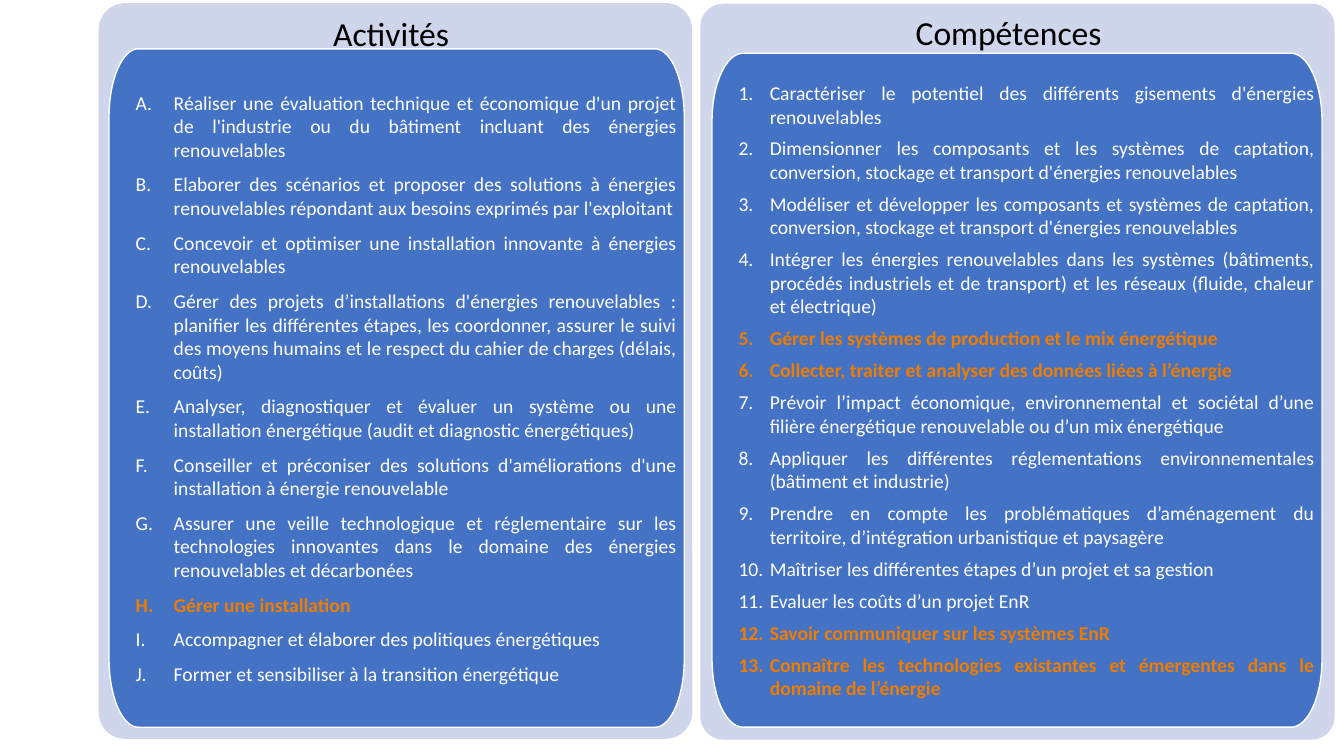
from dataclasses import dataclass

from lxml import etree
from pptx import Presentation
from pptx import util as u
from pptx.dml.color import RGBColor
from pptx.enum import shapes, text
from pptx.oxml.ns import qn


@dataclass(frozen=True)
class Theme:
    font: str = "Calibri"
    heading_size: int = 24
    item_size: int = 14
    card: str = "CFD5EA"
    panel: str = "4472C4"
    heading: str = "000000"
    item: str = "FFFFFF"
    new_item: str = "EF7D00"
    outline: str = "FFFFFF"


class Page:
    """Draws on one slide in one style; all lengths are in points."""

    def __init__(self, slide, theme):
        self.slide, self.theme = slide, theme

    def style(self, paragraph, size, colour, bold=False):
        for run in paragraph.runs:
            run.font.name = self.theme.font
            run.font.size = u.Pt(size)
            run.font.bold = bold
            run.font.color.rgb = RGBColor.from_string(colour)

    def fill(self, shape, colour):
        shape.shadow.inherit = False
        shape.fill.solid()
        shape.fill.fore_color.rgb = RGBColor.from_string(colour)

    def card(self, box, rounding):
        card = self.slide.shapes.add_shape(
            shapes.MSO_SHAPE.ROUNDED_RECTANGLE, *map(u.Pt, box))
        card.adjustments[0] = rounding
        self.fill(card, self.theme.card)
        card.line.fill.background()

    def heading(self, box, wording):
        frame = self.slide.shapes.add_textbox(*map(u.Pt, box)).text_frame
        frame.word_wrap = True
        frame.vertical_anchor = text.MSO_ANCHOR.MIDDLE
        frame.margin_left = frame.margin_right = u.Pt(27)
        frame.margin_top = frame.margin_bottom = 0
        frame.text = wording
        title = frame.paragraphs[0]
        title.alignment = text.PP_ALIGN.CENTER
        title.line_spacing = 0.9
        self.style(title, self.theme.heading_size, self.theme.heading)

    def panel(self, box):
        """Rectangle with tall elliptical corners, 5.1 % by 10.1 % of its size."""
        left, top, width, height = map(u.Pt, box)
        rx, ry = int(0.051 * width), int(0.101 * height)
        points = [(0, ry), (rx, 0), (width - rx, 0), (width, ry),
                  (width, height - ry), (width - rx, height), (rx, height), (0, height - ry)]
        corners = [(0, 0), (width, 0), (width, height), (0, height)]
        outline = self.slide.shapes.build_freeform(*points[0])
        outline.add_line_segments(points[1:] + points[:1], close=True)
        panel = outline.convert_to_shape(left, top)
        # Turn every other straight side into a quarter ellipse
        sides = list(panel._element.iter(qn("a:lnTo")))[::2]
        for side, corner, start, end in zip(sides, corners, points[::2], points[1::2]):
            curve = etree.Element(qn("a:cubicBezTo"))
            pulls = [tuple(round(p + 0.55 * (c - p)) for p, c in zip(point, corner))
                     for point in (start, end)]
            for x, y in (*pulls, end):
                etree.SubElement(curve, qn("a:pt"), x=str(x), y=str(y))
            side.getparent().replace(side, curve)
        self.fill(panel, self.theme.panel)
        panel.line.color.rgb = RGBColor.from_string(self.theme.outline)
        panel.line.width = u.Pt(1)
        return panel

    def numbered_list(self, panel, items, new, scheme, indent, hanging, gap):
        frame = panel.text_frame
        frame.word_wrap = True
        frame.vertical_anchor = text.MSO_ANCHOR.MIDDLE
        frame.margin_left = frame.margin_right = u.Pt(5.25)
        frame.margin_top = frame.margin_bottom = u.Pt(5.25)
        frame.text = "\n".join(items)
        for number, item in enumerate(frame.paragraphs, 1):
            item.alignment = text.PP_ALIGN.JUSTIFY
            item.space_after = u.Pt(gap)
            props = item._p.get_or_add_pPr()
            props.set("marL", str(u.Pt(indent)))
            props.set("indent", str(u.Pt(-hanging)))
            etree.SubElement(props, qn("a:buFont"), typeface="+mj-lt")
            etree.SubElement(props, qn("a:buAutoNum"), type=scheme)
            is_new = number in new
            self.style(item, self.theme.item_size,
                       self.theme.new_item if is_new else self.theme.item, is_new)


ACTIVITIES = [
    "Réaliser une évaluation technique et économique d'un projet de l'industrie ou du bâtiment incluant des énergies renouvelables",
    "Elaborer des scénarios et proposer des solutions à énergies renouvelables répondant aux besoins exprimés par l'exploitant",
    "Concevoir et optimiser une installation innovante à énergies renouvelables",
    "Gérer des projets d’installations d'énergies renouvelables : planifier les différentes étapes, les coordonner, assurer le suivi des moyens humains et le respect du cahier de charges (délais, coûts)",
    "Analyser, diagnostiquer et évaluer un système ou une installation énergétique (audit et diagnostic énergétiques)",
    "Conseiller et préconiser des solutions d'améliorations d'une installation à énergie renouvelable",
    "Assurer une veille technologique et réglementaire sur les technologies innovantes dans le domaine des énergies renouvelables et décarbonées",
    "Gérer une installation",
    "Accompagner et élaborer des politiques énergétiques",
    "Former et sensibiliser à la transition énergétique",
]
SKILLS = [
    "Caractériser le potentiel des différents gisements d'énergies renouvelables",
    "Dimensionner les composants et les systèmes de captation, conversion, stockage et transport d'énergies renouvelables",
    "Modéliser et développer les composants et systèmes de captation, conversion, stockage et transport d'énergies renouvelables",
    "Intégrer les énergies renouvelables dans les systèmes (bâtiments, procédés industriels et de transport) et les réseaux (fluide, chaleur et électrique)",
    "Gérer les systèmes de production et le mix énergétique",
    "Collecter, traiter et analyser des données liées à l’énergie",
    "Prévoir l’impact économique, environnemental et sociétal d’une filière énergétique renouvelable ou d’un mix énergétique",
    "Appliquer les différentes réglementations environnementales (bâtiment et industrie)",
    "Prendre en compte les problématiques d’aménagement du territoire, d’intégration urbanistique et paysagère",
    "Maîtriser les différentes étapes d’un projet et sa gestion",
    "Evaluer les coûts d’un projet EnR",
    "Savoir communiquer sur les systèmes EnR",
    "Connaître les technologies existantes et émergentes dans le domaine de l’énergie",
]


def main():
    deck = Presentation()
    deck.slide_width, deck.slide_height = u.Pt(960), u.Pt(540)
    page = Page(deck.slides.add_slide(deck.slide_layouts[6]), Theme())

    # Activities, on the left
    page.card((70.5, 2.2, 424, 525.6), 0.045)
    page.heading((72, 0, 414.7, 50.4), "Activités")
    activities = page.panel((77.9, 34.9, 410.9, 484.6))
    page.numbered_list(activities, ACTIVITIES, {8}, "alphaUcPeriod",
                       indent=41, hanging=27.2, gap=8)

    # Skills, on the right
    page.card((500.3, 2.7, 453, 525.6), 0.036)
    page.heading((492.2, 2.7, 456.5, 44), "Compétences")
    skills = page.panel((508.6, 38, 435.7, 481.4))
    page.numbered_list(skills, SKILLS, {5, 6, 12, 13}, "arabicPeriod",
                       indent=36, hanging=22.3, gap=6)

    deck.save("out.pptx")


if __name__ == "__main__":
    main()
